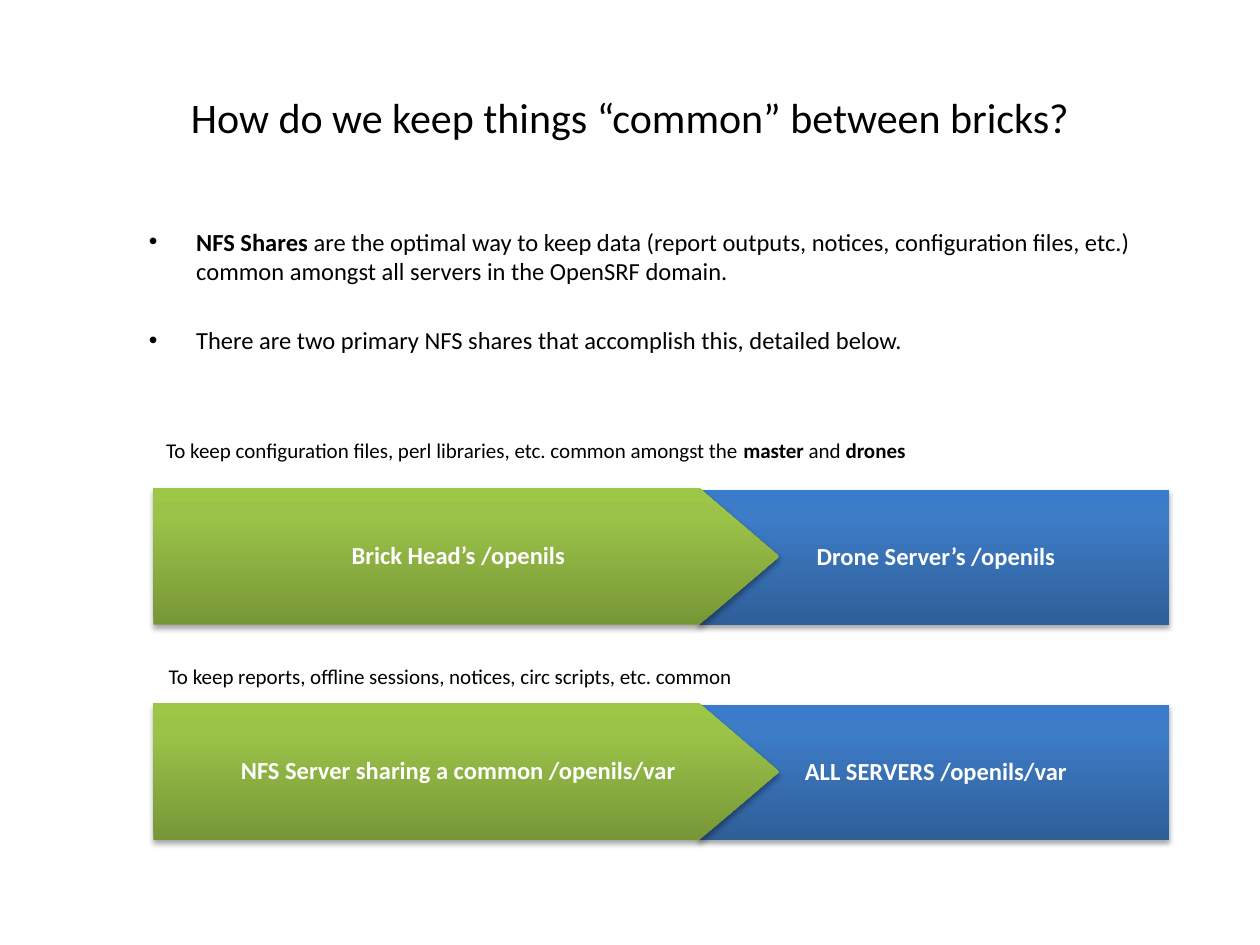
from dataclasses import dataclass

from lxml.etree import SubElement
from pptx import Presentation
from pptx.dml.color import RGBColor
from pptx.enum.shapes import MSO_SHAPE
from pptx.enum.text import MSO_ANCHOR, PP_ALIGN
from pptx.oxml import parse_xml
from pptx.oxml.ns import nsdecls, qn
from pptx.util import Pt


@dataclass(frozen=True)
class Theme:
    font: str = "Calibri"
    ink: str = "000000"
    light: str = "FFFFFF"
    green: tuple = ((0, "779737"), (80, "9BC348"), (100, "9DC746"))
    blue: tuple = ((0, "2F5F99"), (80, "3D7CC7"), (100, "3A7CCB"))
    title_size: int = 24
    body_size: int = 14
    label_size: int = 12


THEME = Theme()


def place(shape, box):
    shape.left, shape.top, shape.width, shape.height = map(Pt, box)


def write_runs(paragraph, parts, size, color=THEME.ink):
    """Write (text, bold) parts into one paragraph."""
    for text, bold in parts:
        run = paragraph.add_run()
        run.text = text
        run.font.name = THEME.font
        run.font.size = Pt(size)
        run.font.bold = bold
        run.font.color.rgb = RGBColor.from_string(color)


def add_title(slide, box, text):
    title = slide.shapes.title
    place(title, box)
    title.text_frame.vertical_anchor = MSO_ANCHOR.MIDDLE
    paragraph = title.text_frame.paragraphs[0]
    paragraph.alignment = PP_ALIGN.CENTER
    write_runs(paragraph, [(text, False)], THEME.title_size)


def add_text_box(slide, box):
    shape = slide.shapes.add_textbox(*map(Pt, box))
    shape.text_frame.word_wrap = True
    return shape.text_frame


def add_bullets(slide, box, items):
    frame = add_text_box(slide, box)
    for index, parts in enumerate(items):
        paragraph = frame.paragraphs[0] if index == 0 else frame.add_paragraph()
        properties = paragraph._p.get_or_add_pPr()
        properties.set("marL", str(Pt(27)))
        properties.set("indent", str(Pt(-27)))
        SubElement(properties, qn("a:buFont"), typeface="Arial")
        SubElement(properties, qn("a:buChar"), char="•")
        if index:
            paragraph.space_before = Pt(22.5)
        write_runs(paragraph, parts, THEME.body_size)


def add_label(slide, box, parts):
    frame = add_text_box(slide, box)
    write_runs(frame.paragraphs[0], parts, THEME.label_size)


def style_block(shape, stops, text, insets):
    """Give a block its upward gradient, soft shadow and centred text."""
    shape.line.fill.background()
    stop_xml = "".join(
        f'<a:gs pos="{position * 1000}"><a:srgbClr val="{color}"/></a:gs>'
        for position, color in stops
    )
    gradient = parse_xml(
        f'<a:gradFill {nsdecls("a")} rotWithShape="1"><a:gsLst>{stop_xml}</a:gsLst>'
        '<a:lin ang="16200000" scaled="0"/></a:gradFill>'
    )
    shadow = parse_xml(
        f'<a:effectLst {nsdecls("a")}><a:outerShdw blurRad="{Pt(3.1)}" '
        f'dist="{Pt(1.8)}" dir="5400000" rotWithShape="0"><a:srgbClr val="000000">'
        '<a:alpha val="35000"/></a:srgbClr></a:outerShdw></a:effectLst>'
    )
    line = shape._element.spPr.find(qn("a:ln"))
    line.addprevious(gradient)
    line.addnext(shadow)

    frame = shape.text_frame
    frame.word_wrap = True
    frame.vertical_anchor = MSO_ANCHOR.MIDDLE
    frame.margin_left, frame.margin_right = map(Pt, insets)
    frame.margin_top = frame.margin_bottom = Pt(2)
    paragraph = frame.paragraphs[0]
    paragraph.alignment = PP_ALIGN.CENTER
    paragraph.line_spacing = 0.9
    write_runs(paragraph, [(text, True)], THEME.body_size, THEME.light)


def add_share_band(slide, box, source, target):
    """Draw a green source arrow that points into a blue target block."""
    left, top, width, height = box
    shoulder, tip = left + 312, left + 357.7
    bottom = top + height
    shapes = slide.shapes.add_group_shape().shapes

    # Target block, which starts at the arrow's shoulder
    block = shapes.add_shape(
        MSO_SHAPE.RECTANGLE,
        *map(Pt, (shoulder, top + 1, left + width - shoulder, height - 1)),
    )
    style_block(block, THEME.blue, target, (29, 27))

    # Source arrow
    outline = [(shoulder, top), (tip, top + height / 2),
               (shoulder, bottom), (left, bottom)]
    builder = shapes.build_freeform(Pt(left), Pt(top))
    builder.add_line_segments([(Pt(x), Pt(y)) for x, y in outline], close=True)
    style_block(builder.convert_to_shape(), THEME.green, source, (4.5, 13.5))


def main():
    presentation = Presentation()
    presentation.slide_width, presentation.slide_height = Pt(720), Pt(540)
    slide = presentation.slides.add_slide(presentation.slide_layouts[5])

    add_title(slide, (36, 21.6, 648, 90),
              "How do we keep things “common” between bricks?")
    add_bullets(slide, (78, 126, 594, 96), [
        [("NFS Shares", True),
         (" are the optimal way to keep data (report outputs, notices, "
          "configuration files, etc.) common amongst all servers in the "
          "OpenSRF domain.", False)],
        [("There are two primary NFS shares that accomplish this, "
          "detailed below.", False)],
    ])

    # Share of the brick head
    add_label(slide, (87.8, 246.2, 588, 21.8), [
        ("To keep configuration files, perl libraries, etc. common amongst the ",
         False),
        ("master", True), (" and ", False), ("drones", True),
    ])
    add_share_band(slide, (87.6, 279, 580.4, 78),
                   "Brick Head’s /openils", "Drone Server’s /openils")

    # Share of the NFS server
    add_label(slide, (89.3, 375.8, 588, 21.8), [
        ("To keep reports, offline sessions, notices, circ scripts, etc. common",
         False),
    ])
    add_share_band(slide, (87.6, 402, 580.4, 78),
                   "NFS Server sharing a common /openils/var",
                   "ALL SERVERS /openils/var")

    presentation.save("out.pptx")


if __name__ == "__main__":
    main()
